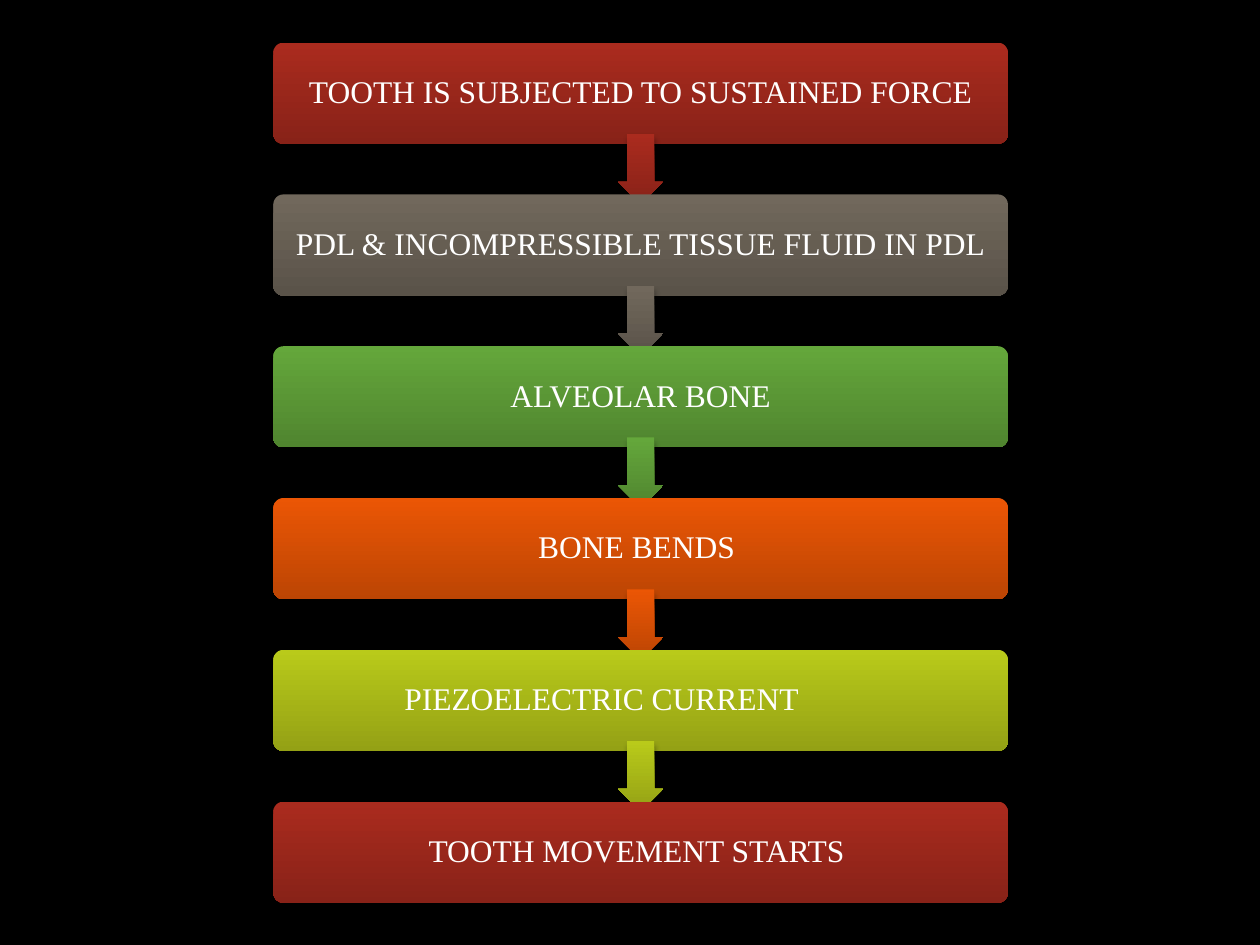
from dataclasses import dataclass

from lxml.etree import SubElement
from pptx import Presentation
from pptx.dml.color import RGBColor
from pptx.enum.shapes import MSO_SHAPE
from pptx.enum.text import MSO_ANCHOR, PP_ALIGN
from pptx.oxml.ns import qn
from pptx.util import Cm, Pt


@dataclass(frozen=True)
class Theme:
    """Colours and type of the flow chart."""

    background: str = "000000"
    shadow: str = "000000"
    text: str = "FFFFFF"
    font: str = "Times New Roman"
    size: int = 18
    red: tuple = ("AA2B1E", "882218")
    taupe: tuple = ("71685C", "5A5349")
    green: tuple = ("64A73B", "50852F")
    orange: tuple = ("EB5605", "BC4504")
    lime: tuple = ("B9CA1A", "94A115")


def apply_format(target, values):
    """Set every attribute named in values on target."""
    for name, value in values.items():
        setattr(target, name, value)


class FlowSlide:
    """Draws steps and arrows on one slide in one theme."""

    def __init__(self, slide, theme):
        """Keep the slide and theme and paint the background."""
        self.slide, self.theme = slide, theme
        backdrop = slide.background.fill
        backdrop.solid()
        backdrop.fore_color.rgb = RGBColor.from_string(theme.background)

    def panel(self, preset, left, top, width, height, shades, adjustments):
        """Add a borderless shape with a vertical gradient and soft shadow."""
        panel = self.slide.shapes.add_shape(
            preset, Cm(left), Cm(top), Cm(width), Cm(height))
        for index, ratio in enumerate(adjustments):
            panel.adjustments[index] = ratio
        panel.line.fill.background()
        panel.fill.gradient()
        panel.fill.gradient_angle = 270
        for stop, shade in zip(panel.fill.gradient_stops, shades):
            stop.color.rgb = RGBColor.from_string(shade)
        self.soft_shadow(panel)
        return panel

    def soft_shadow(self, panel):
        """Give the panel a translucent drop shadow."""
        panel.shadow.inherit = False
        effects = panel._element.spPr.find(qn("a:effectLst"))
        outer = SubElement(effects, qn("a:outerShdw"), blurRad=str(Pt(3)),
                           dist=str(Pt(3)), dir="4800000", rotWithShape="0")
        tint = SubElement(outer, qn("a:srgbClr"), val=self.theme.shadow)
        SubElement(tint, qn("a:alpha"), val="32000")

    def step(self, wording, left, top, width, height, shades, right_inset):
        """Add a rounded step with centred wording."""
        step = self.panel(MSO_SHAPE.ROUNDED_RECTANGLE, left, top, width,
                          height, shades, [0.1])
        frame = step.text_frame
        apply_format(frame, {
            "word_wrap": True, "vertical_anchor": MSO_ANCHOR.MIDDLE,
            "margin_left": Cm(0.18), "margin_right": Cm(right_inset),
            "margin_top": Cm(0.18), "margin_bottom": Cm(0.18)})
        paragraph = frame.paragraphs[0]
        apply_format(paragraph, {
            "alignment": PP_ALIGN.CENTER, "line_spacing": 0.9})
        run = paragraph.add_run()
        run.text = wording
        apply_format(run.font, {
            "name": self.theme.font, "size": Pt(self.theme.size)})
        run.font.color.rgb = RGBColor.from_string(self.theme.text)

    def arrow(self, center, top, width, height, shades):
        """Add a downward arrow centred on a column."""
        self.panel(MSO_SHAPE.DOWN_ARROW, center - width / 2, top, width,
                   height, shades, [0.6, 0.5])


def main():
    """Build the tooth movement flow chart."""
    theme = Theme()
    deck = Presentation()
    deck.slide_width, deck.slide_height = Cm(25.4), Cm(19.05)
    flow = FlowSlide(deck.slides.add_slide(deck.slide_layouts[6]), theme)

    left, first_top, width, height, pitch = 5.51, 0.86, 14.81, 2.04, 3.06
    inset, shifted_inset = 0.18, 1.75
    stages = [
        ("TOOTH IS SUBJECTED TO SUSTAINED FORCE", theme.red, inset),
        ("PDL & INCOMPRESSIBLE TISSUE FLUID IN PDL", theme.taupe, inset),
        ("ALVEOLAR BONE", theme.green, inset),
        ("BONE BENDS ", theme.orange, inset),
        ("PIEZOELECTRIC CURRENT", theme.lime, shifted_inset),
        ("TOOTH MOVEMENT STARTS ", theme.red, inset),
    ]
    for index, (wording, shades, right_inset) in enumerate(stages):
        top = first_top + index * pitch
        flow.step(wording, left, top, width, height, shades, right_inset)
        if index < len(stages) - 1:
            flow.arrow(left + width / 2, top + height - 0.2, 0.91, 1.42, shades)

    deck.save("out.pptx")


if __name__ == "__main__":
    main()
